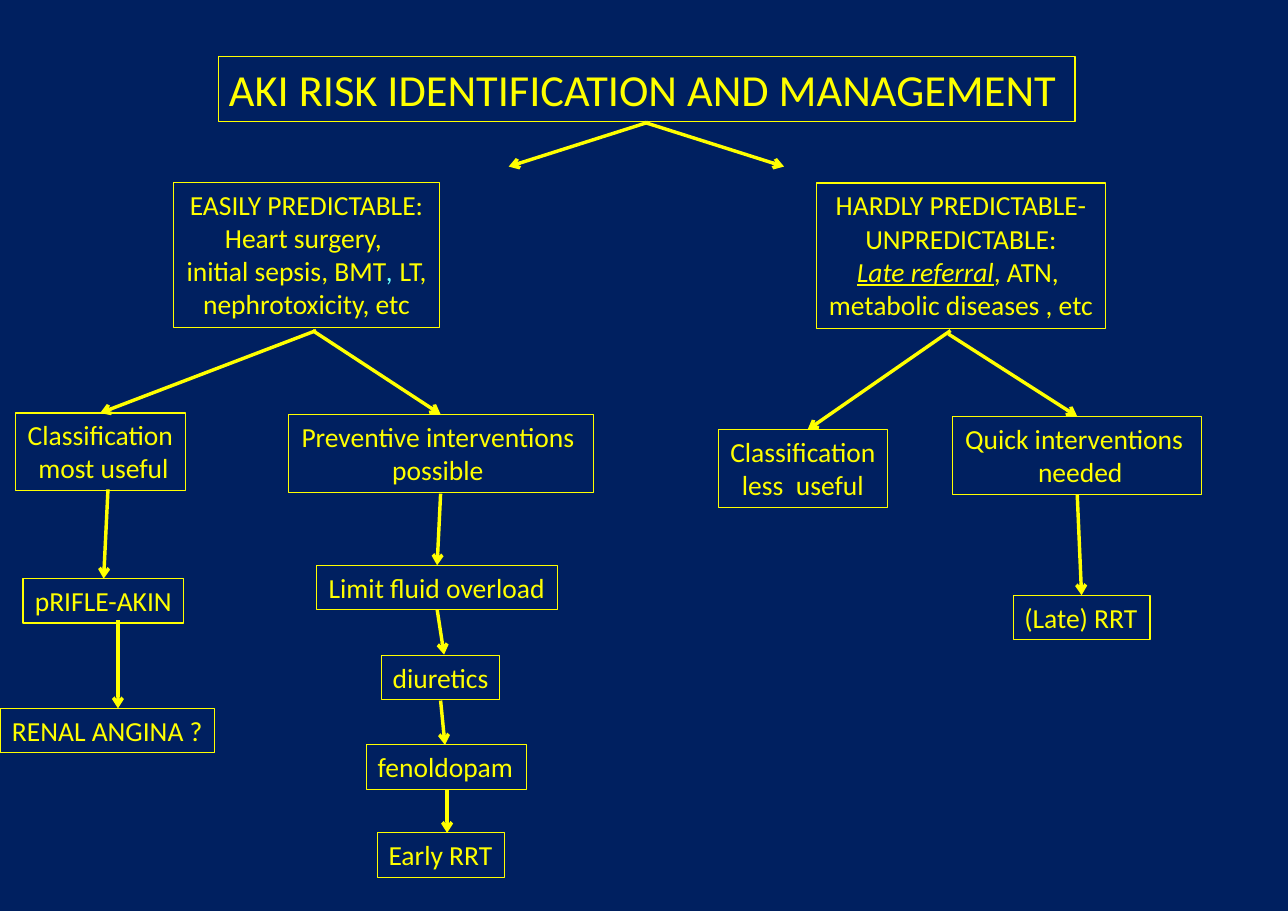
from lxml.etree import SubElement
from pptx import Presentation
from pptx.dml.color import RGBColor
from pptx.enum.shapes import MSO_CONNECTOR
from pptx.enum.text import MSO_ANCHOR, MSO_AUTO_SIZE, PP_ALIGN
from pptx.oxml.ns import qn
from pptx.util import Cm, Pt


def color(value):
    return RGBColor.from_string(value)


class FlowChart:
    font = "Calibri"
    back = "002060"
    ink = "FFFF00"
    accent = "66FFFF"
    padding = 0.25
    line_per_point = 0.043

    def __init__(self, slide):
        self.s = slide
        fill = slide.background.fill
        fill.solid()
        fill.fore_color.rgb = color(self.back)

    def box(self, x, y, w, text, size=18, align=PP_ALIGN.CENTER):
        lines = text.split("\n")
        h = self.padding + len(lines) * size * self.line_per_point
        sp = self.s.shapes.add_textbox(Cm(x), Cm(y), Cm(w), Cm(h))
        sp.line.color.rgb = color(self.ink)
        sp.line.width = Pt(0.75)
        tf = sp.text_frame
        tf.text = text
        tf.word_wrap = False
        tf.auto_size = MSO_AUTO_SIZE.SHAPE_TO_FIT_TEXT
        tf.vertical_anchor = MSO_ANCHOR.TOP
        for p in tf.paragraphs:
            p.alignment = align
            for r in p.runs:
                self.style(r, size)
        return tf

    def style(self, r, size=18):
        r.font.name = self.font
        r.font.size = Pt(size)
        r.font.color.rgb = color(self.ink)

    def split(self, p, *parts):
        """Replace the text of a paragraph by separate runs and return them."""
        p.runs[0].text = parts[0]
        for part in parts[1:]:
            r = p.add_run()
            r.text = part
            self.style(r)
        return p.runs

    def arrow(self, x1, y1, x2, y2):
        c = self.s.shapes.add_connector(
            MSO_CONNECTOR.STRAIGHT, Cm(x1), Cm(y1), Cm(x2), Cm(y2))
        c.line.color.rgb = color(self.ink)
        c.line.width = Pt(2.25)
        SubElement(c.line._get_or_add_ln(), qn("a:tailEnd"), type="arrow")
        SubElement(c._element.spPr, qn("a:effectLst"))


def main():
    prs = Presentation()
    prs.slide_width, prs.slide_height = Cm(29.7), Cm(21)
    chart = FlowChart(prs.slides.add_slide(prs.slide_layouts[6]))

    # Title
    chart.box(5.03, 1.3, 19.76, "AKI RISK IDENTIFICATION AND MANAGEMENT",
              size=29, align=PP_ALIGN.LEFT)

    # The two kinds of risk
    hardly = chart.box(18.82, 4.22, 6.68,
                       "HARDLY PREDICTABLE-\nUNPREDICTABLE:\n"
                       "Late referral, ATN, \nmetabolic diseases , etc")
    referral = chart.split(hardly.paragraphs[2], "Late referral", ", ATN, ")[0]
    referral.font.italic = referral.font.underline = True

    easily = chart.box(4.01, 4.2, 6.12,
                       "EASILY PREDICTABLE:\nHeart surgery, \n"
                       "initial sepsis, BMT, LT,\nnephrotoxicity, etc")
    comma = chart.split(easily.paragraphs[2],
                        "initial sepsis, BMT", ", ", "LT,")[1]
    comma.font.italic = True
    comma.font.color.rgb = color(chart.accent)

    # Centred steps: left, top, width, text
    for step in (
        (0.36, 9.52, 3.91, "Classification\n most useful"),
        (0.53, 13.34, 3.71, "pRIFLE-AKIN"),
        (0, 16.33, 4.95, "RENAL ANGINA ?"),
        (6.65, 9.55, 7.04, "Preventive interventions \npossible "),
        (7.29, 13.03, 5.56, "Limit fluid overload"),
        (8.79, 15.11, 2.74, "diuretics"),
        (16.56, 9.91, 3.91, "Classification\nless  useful"),
        (21.97, 9.6, 5.74, "Quick interventions \n needed"),
    ):
        chart.box(*step)

    # Left-aligned steps
    for step in (
        (8.46, 17.17, 3.68, "fenoldopam"),
        (8.71, 19.2, 2.92, "Early RRT"),
        (23.37, 13.72, 3.15, "(Late) RRT"),
    ):
        chart.box(*step, align=PP_ALIGN.LEFT)

    # Arrows: start x, y and end x, y
    for ends in (
        # from the title
        (14.94, 2.82, 11.73, 3.84),
        (14.86, 2.82, 18.08, 3.84),
        # easily predictable
        (7.29, 7.62, 2.31, 9.52),
        (2.49, 11.28, 2.39, 13.34),
        (2.72, 14.3, 2.72, 16.33),
        (7.21, 7.62, 10.16, 9.55),
        (10.16, 11.38, 10.08, 13.03),
        (10.08, 14.05, 10.24, 15.09),
        (10.16, 16.15, 10.26, 17.17),
        (10.31, 18.19, 10.31, 19.2),
        # hardly predictable
        (21.92, 7.62, 18.62, 9.91),
        (21.87, 7.7, 24.84, 9.6),
        (24.84, 11.4, 24.94, 13.72),
    ):
        chart.arrow(*ends)

    prs.save("out.pptx")


if __name__ == "__main__":
    main()
